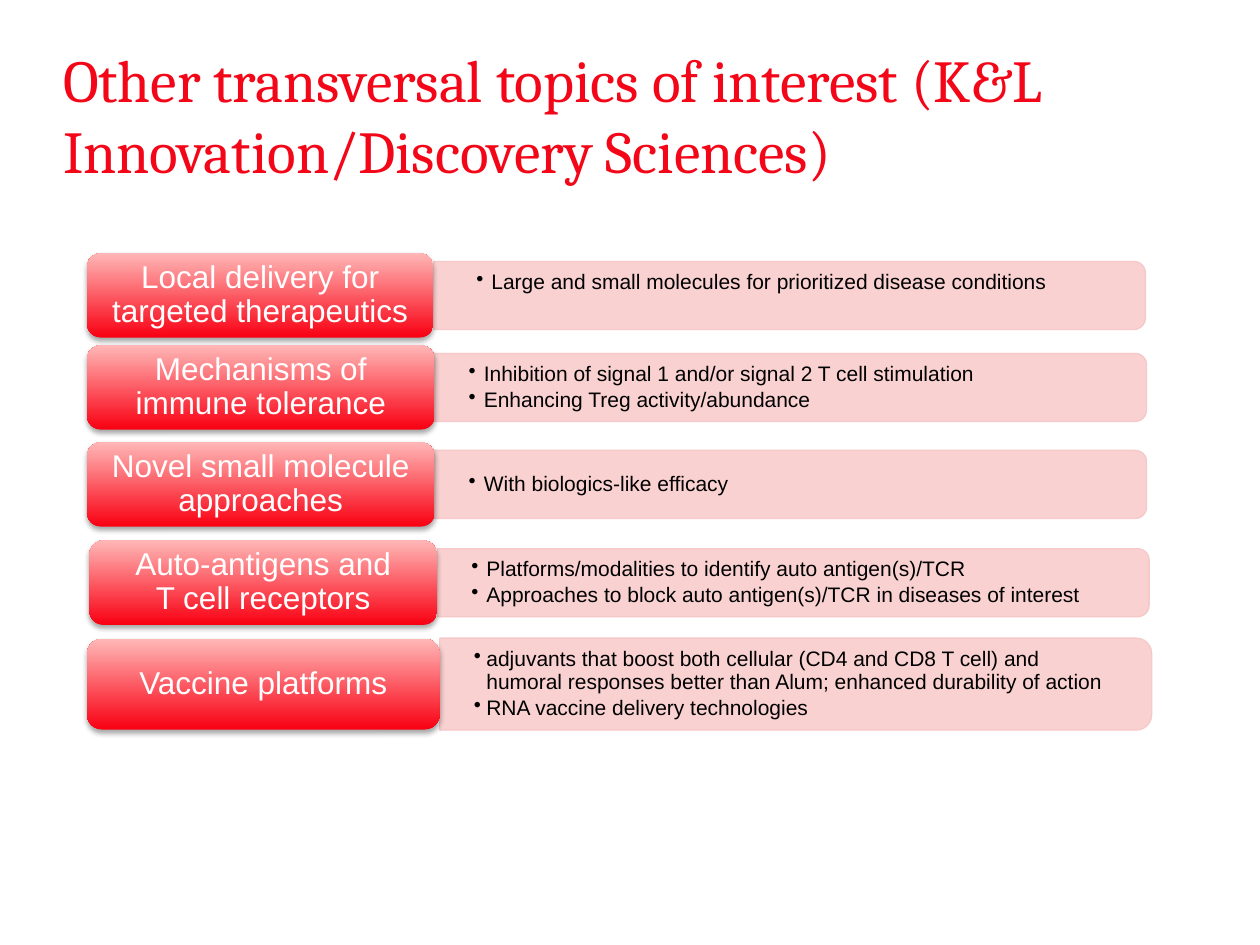
import lxml.etree
import pptx
import pptx.dml.color
import pptx.enum.shapes
import pptx.enum.text
import pptx.oxml.ns
import pptx.util

Inches = pptx.util.Inches
Pt = pptx.util.Pt
qn = pptx.oxml.ns.qn
ALIGN = pptx.enum.text.PP_ALIGN
ANCHOR = pptx.enum.text.MSO_ANCHOR
SHAPE = pptx.enum.shapes.MSO_SHAPE


def paint(color, hex_code, alpha=None):
    """Set a colour from a hex string, with an opacity in percent if given."""
    color.rgb = pptx.dml.color.RGBColor.from_string(hex_code)
    if alpha:
        for node in color._xFill.iter(qn("a:srgbClr")):
            lxml.etree.SubElement(node, qn("a:alpha"), val=str(alpha * 1000))


def write(frame, lines, size, color, font="Arial", align=ALIGN.LEFT, anchor=ANCHOR.MIDDLE,
          inset=(0, 0), spacing=0.9, after=0, hang=None):
    """Fill a text frame with one paragraph per line; hang adds a bullet with that indent."""
    frame.word_wrap = True
    frame.auto_size = pptx.enum.text.MSO_AUTO_SIZE.NONE
    frame.vertical_anchor = anchor
    frame.margin_left = frame.margin_right = Inches(inset[0])
    frame.margin_top = frame.margin_bottom = Inches(inset[1])
    for number, line in enumerate(lines):
        paragraph = frame.add_paragraph() if number else frame.paragraphs[0]
        paragraph.text = line
        if hang:
            properties = paragraph._p.get_or_add_pPr()
            properties.set("marL", str(Inches(hang)))
            properties.set("indent", str(-Inches(hang)))
            lxml.etree.SubElement(properties, qn("a:buChar"), char="•")
        paragraph.alignment = align
        paragraph.line_spacing = spacing
        paragraph.space_after = Pt(after)
        for run in paragraph.runs:
            run.font.name = font
            run.font.size = Pt(size)
            paint(run.font.color, color)


deck = pptx.Presentation()
deck.slide_width, deck.slide_height = Inches(10), Inches(7.5)
slide = deck.slides.add_slide(deck.slide_layouts[5])

heading = slide.shapes.title
heading.left, heading.top = Inches(0.5), Inches(0.34)
heading.width, heading.height = Inches(9), Inches(0.73)
write(heading.text_frame, ["Other transversal topics of interest (K&L Innovation/Discovery Sciences)"],
      34, "F30617", font="Cambria", anchor=ANCHOR.TOP, spacing=1.0)

# topic, its left, top, width and height, panel height, text offset, bullet indent, details
topics = [
    ("Local delivery for targeted therapeutics", 0.69, 2.01, 2.75, 0.67, 0.54, 0.07, 0.12,
     ["Large and small molecules for prioritized disease conditions"]),
    ("Mechanisms of immune tolerance", 0.69, 2.74, 2.76, 0.67, 0.54, 0, 0.12,
     ["Inhibition of signal 1 and/or signal 2 T cell stimulation",
      "Enhancing Treg activity/abundance"]),
    ("Novel small molecule approaches", 0.69, 3.51, 2.76, 0.67, 0.54, 0, 0.12,
     ["With biologics-like efficacy"]),
    ("Auto-antigens and\vT cell receptors", 0.71, 4.29, 2.76, 0.67, 0.54, 0, 0.12,
     ["Platforms/modalities to identify auto antigen(s)/TCR",
      "Approaches to block auto antigen(s)/TCR in diseases of interest"]),
    ("Vaccine platforms", 0.69, 5.07, 2.8, 0.72, 0.73, 0, 0.1,
     ["adjuvants that boost both cellular (CD4 and CD8 T cell) and humoral responses "
      "better than Alum; enhanced durability of action",
      "RNA vaccine delivery technologies"]),
]
panel_length = 5.65

for topic, left, top, width, height, depth, offset, hang, details in topics:
    joint = left + width
    middle = top + height / 2

    # The panel is a tab turned a quarter, so its rounded end faces right.
    panel = slide.shapes.add_shape(
        SHAPE.ROUND_2_SAME_RECTANGLE, Inches(joint + (panel_length - depth) / 2),
        Inches(middle - panel_length / 2), Inches(depth), Inches(panel_length))
    panel.rotation = 90
    panel.shadow.inherit = False
    panel.fill.solid()
    paint(panel.fill.fore_color, "FACCCC", alpha=90)
    panel.line.width = Pt(0.75)
    paint(panel.line.color, "F6C6C6", alpha=90)

    # The first topic's single detail sits on the upper line of its panel.
    raised = offset > 0
    detail_box = slide.shapes.add_textbox(
        Inches(joint + offset), Inches(middle - depth / 2 + 0.03),
        Inches(panel_length - 0.03), Inches(depth - 0.06))
    write(detail_box.text_frame, details, 12, "000000", hang=hang, after=1.8,
          anchor=ANCHOR.TOP if raised else ANCHOR.MIDDLE, inset=(0.27, 0.05 if raised else 0.14))

    label = slide.shapes.add_shape(
        SHAPE.ROUNDED_RECTANGLE, Inches(left), Inches(top), Inches(width), Inches(height))
    label.line.fill.background()
    label.fill.gradient()
    label.fill.gradient_angle = 90
    for stop, shade in zip(label.fill.gradient_stops, ("F90012", "FFB7B7")):
        paint(stop.color, shade)
    label.shadow.inherit = False
    effects = label._element.spPr.find(qn("a:effectLst"))
    shadow = lxml.etree.SubElement(effects, qn("a:outerShdw"), blurRad=str(Pt(3.1)),
                                   dist=str(Pt(1.8)), dir="5400000", rotWithShape="0")
    shadow_color = lxml.etree.SubElement(shadow, qn("a:srgbClr"), val="000000")
    lxml.etree.SubElement(shadow_color, qn("a:alpha"), val="35000")
    write(label.text_frame, [topic], 18, "FFFFFF", align=ALIGN.CENTER, inset=(0.07, 0.07))

deck.save("out.pptx")
